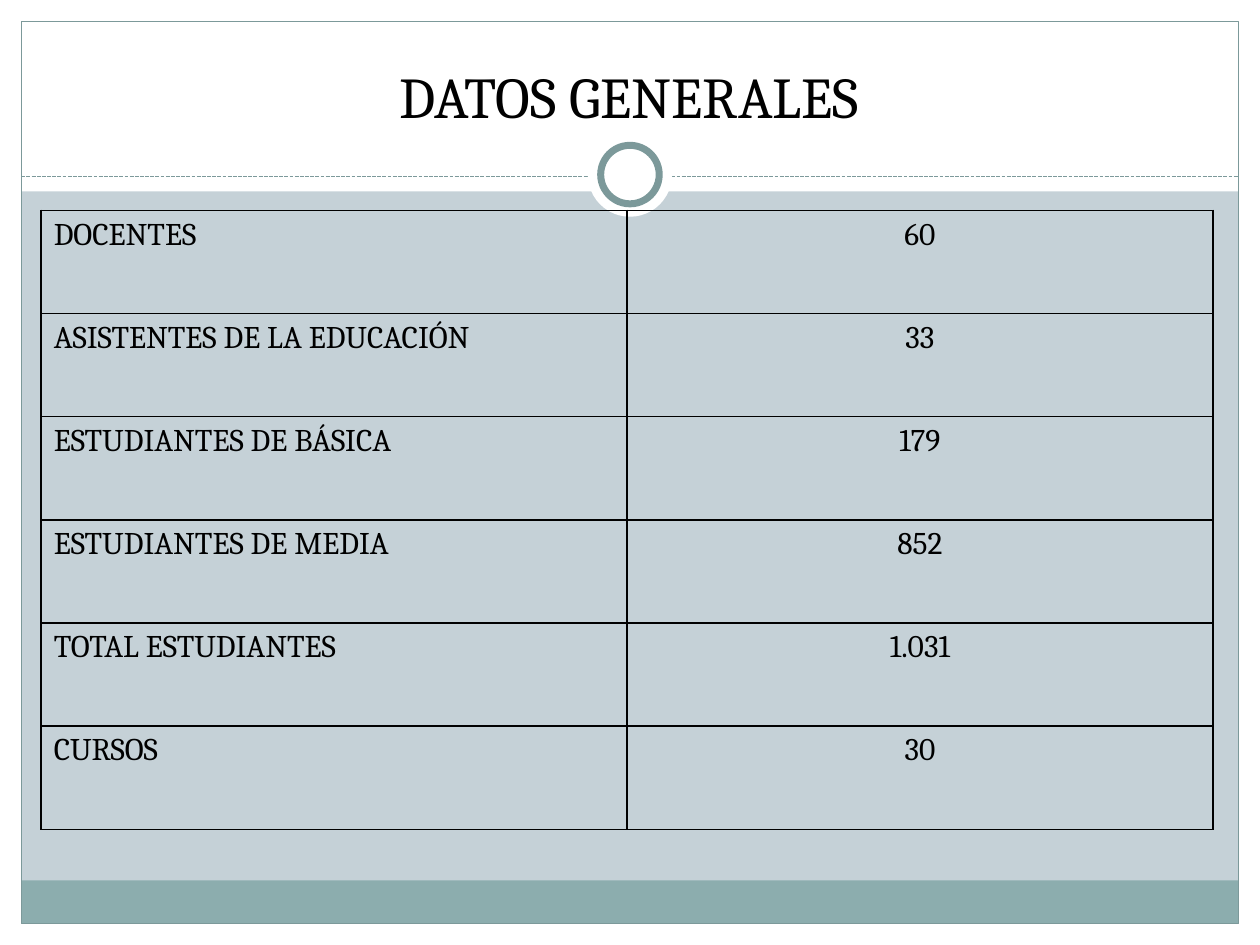
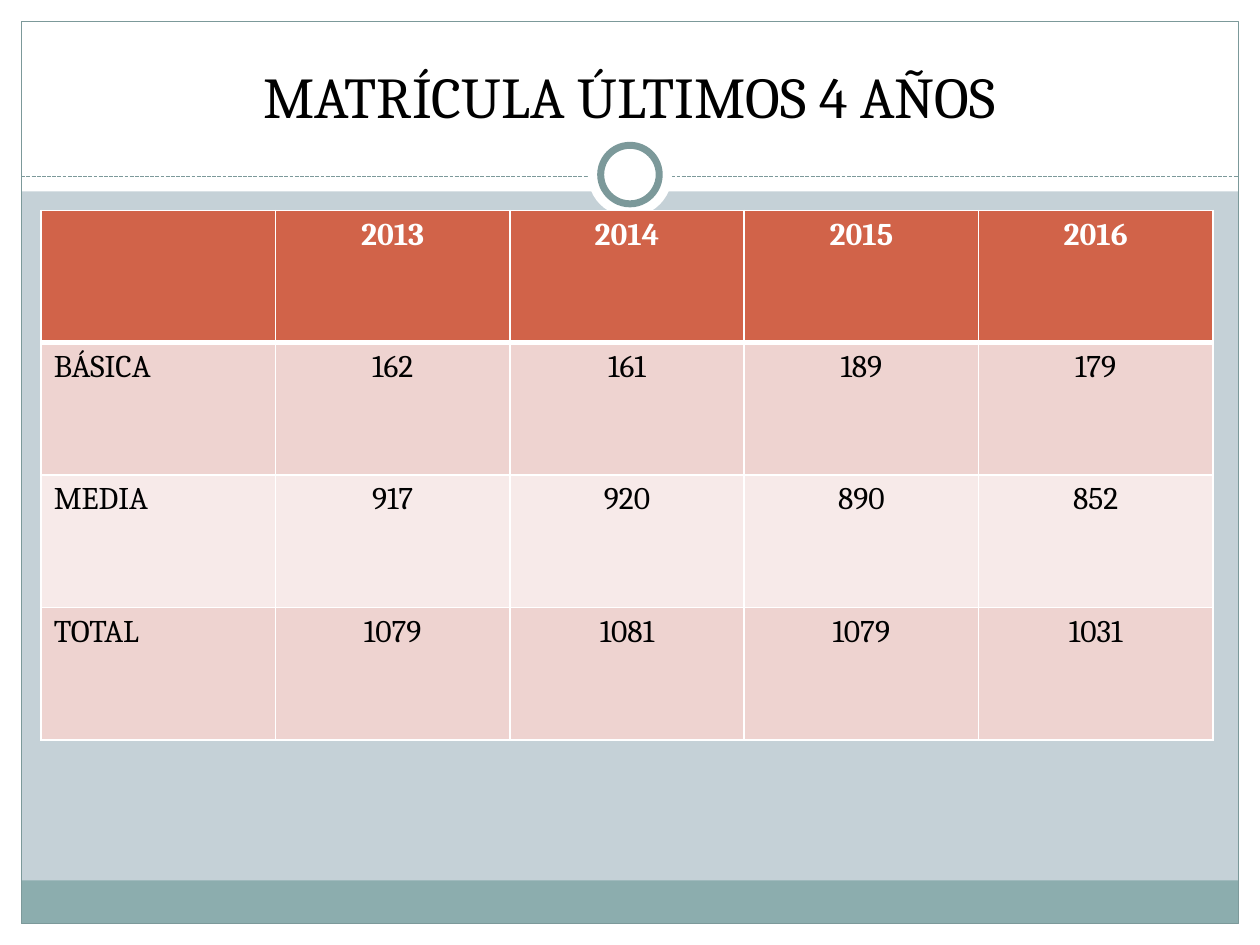
"""Builds two slides of school figures: general data and enrolment over four years."""
import dataclasses

import pptx
import pptx.dml.color
import pptx.enum.dml
import pptx.enum.shapes
import pptx.enum.text
import pptx.oxml
import pptx.oxml.ns
import pptx.util

Cm = pptx.util.Cm
Pt = pptx.util.Pt
SHAPE = pptx.enum.shapes.MSO_SHAPE
ALIGN = pptx.enum.text.PP_ALIGN


@dataclasses.dataclass(frozen=True)
class Theme:
    """Colours, font and type sizes shared by the slides."""
    backdrop: str = "C5D1D7"
    paper: str = "FFFFFF"
    ink: str = "000000"
    footer: str = "8CADAE"
    outline: str = "7C999A"
    header: str = "D16349"
    bands: tuple = ("EED3D0", "F7EAE9")
    font: str = "Cambria"
    title_size: int = 33
    table_size: int = 18


@dataclasses.dataclass(frozen=True)
class Box:
    """A rectangle measured in centimetres."""
    left: float
    top: float
    width: float
    height: float

    @property
    def right(self):
        """Return the right edge."""
        return self.left + self.width

    @property
    def bottom(self):
        """Return the bottom edge."""
        return self.top + self.height

    def lengths(self):
        """Return left, top, width and height as slide lengths."""
        return [Cm(side) for side in dataclasses.astuple(self)]


THEME = Theme()
PAGE = Box(0, 0, 25.4, 19.05)
MARGIN = 0.43
HEADER_HEIGHT = 3.86
RULE_TOP = 3.56
FOOTER_HEIGHT = 0.87
TITLE = Box(0.84, 0.64, 23.7, 2.11)
TABLE_LEFT, TABLE_TOP, TABLE_WIDTH = 0.83, 4.24, 23.62

GENERAL_DATA = [
    ("DOCENTES", "60"),
    ("ASISTENTES DE LA EDUCACIÓN", "33"),
    ("ESTUDIANTES DE BÁSICA", "179"),
    ("ESTUDIANTES DE MEDIA", "852"),
    ("TOTAL ESTUDIANTES", "1.031"),
    ("CURSOS", "30"),
]
ENROLMENT = [
    ("", "2013", "2014", "2015", "2016"),
    ("BÁSICA", "162", "161", "189", "179"),
    ("MEDIA", "917", "920", "890", "852"),
    ("TOTAL", "1079", "1081", "1079", "1031"),
]


def rgb(colour):
    """Return a colour object for a hex string."""
    return pptx.dml.color.RGBColor.from_string(colour)


def style_text(paragraph, size, colour, align, bold=False):
    """Set the font and alignment of a paragraph."""
    paragraph.alignment = align
    paragraph.font.name = THEME.font
    paragraph.font.size = Pt(size)
    paragraph.font.bold = bold
    paragraph.font.color.rgb = rgb(colour)


def add_figure(slide, preset, box, fill=None, line=None, weight=0.75):
    """Add a flat preset shape, filled and outlined only where asked."""
    figure = slide.shapes.add_shape(preset, *box.lengths())
    figure.shadow.inherit = False
    if fill:
        figure.fill.solid()
        figure.fill.fore_color.rgb = rgb(fill)
    else:
        figure.fill.background()
    if line:
        figure.line.color.rgb = rgb(line)
        figure.line.width = Pt(weight)
    else:
        figure.line.fill.background()


def add_rule(slide, box, top):
    """Draw a dashed rule across a box."""
    rule = slide.shapes.add_connector(
        pptx.enum.shapes.MSO_CONNECTOR.STRAIGHT,
        Cm(box.left), Cm(top), Cm(box.right), Cm(top))
    rule.line.color.rgb = rgb(THEME.outline)
    rule.line.width = Pt(0.75)
    rule.line.dash_style = pptx.enum.dml.MSO_LINE.SQUARE_DOT
    properties = rule._element.spPr
    properties.append(properties.makeelement(pptx.oxml.ns.qn("a:effectLst"), {}))


def add_ring(slide, box):
    """Draw a white disc filling a box, with an outlined ring inside it."""
    inset = 0.26
    ring = Box(box.left + inset, box.top + inset,
               box.width - 2 * inset, box.height - 2 * inset)
    add_figure(slide, SHAPE.OVAL, box, THEME.paper)
    add_figure(slide, SHAPE.OVAL, ring, THEME.paper, THEME.outline, 4)


def add_frame(slide, page):
    """Draw the margins, header, footer band, border and ring of a page."""
    inner = Box(page.left + MARGIN, page.top + MARGIN,
                page.width - 2 * MARGIN, page.height - 2 * MARGIN)
    margins = [
        Box(page.left, inner.bottom, page.width, MARGIN),
        Box(page.left, page.top, page.width, HEADER_HEIGHT),
        Box(page.left, page.top, MARGIN, page.height),
        Box(inner.right, page.top, MARGIN, page.height),
    ]
    for margin in margins:
        add_figure(slide, SHAPE.RECTANGLE, margin, THEME.paper)
    footer = Box(inner.left, inner.bottom - FOOTER_HEIGHT, inner.width, FOOTER_HEIGHT)
    add_figure(slide, SHAPE.RECTANGLE, footer, THEME.footer)
    add_figure(slide, SHAPE.RECTANGLE, inner, line=THEME.outline)
    add_rule(slide, inner, page.top + RULE_TOP)
    disc = 1.7
    add_ring(slide, Box(page.left + (page.width - disc) / 2, page.top + 2.67, disc, disc))


def add_title(slide, box, wording):
    """Write the slide title at the foot of a box."""
    frame = slide.shapes.add_textbox(*box.lengths()).text_frame
    frame.word_wrap = True
    frame.vertical_anchor = pptx.enum.text.MSO_ANCHOR.BOTTOM
    frame.text = wording
    style_text(frame.paragraphs[0], THEME.title_size, THEME.ink, ALIGN.CENTER)


def set_borders(cell, colour, top=1, bottom=1):
    """Outline a cell, with its own weights for top and bottom."""
    properties = cell._tc.get_or_add_tcPr()
    weights = {"lnL": 1, "lnR": 1, "lnT": top, "lnB": bottom}
    for position, (side, weight) in enumerate(weights.items()):
        properties.insert(position, pptx.oxml.parse_xml(
            f'<a:{side} {pptx.oxml.ns.nsdecls("a")} w="{Pt(weight)}">'
            f'<a:solidFill><a:srgbClr val="{colour}"/></a:solidFill></a:{side}>'))


def add_grid(slide, box, rows, border, has_header=False):
    """Fill a box with an even table, banded below a header if it has one."""
    grid = slide.shapes.add_table(len(rows), len(rows[0]), *box.lengths()).table
    grid.first_row = has_header
    grid.horz_banding = False
    for row_index, row in enumerate(rows):
        is_header = has_header and row_index == 0
        for column_index, wording in enumerate(row):
            cell = grid.cell(row_index, column_index)
            cell.text = wording
            style_text(cell.text_frame.paragraphs[0], THEME.table_size,
                       THEME.paper if is_header else THEME.ink,
                       ALIGN.CENTER if column_index else ALIGN.LEFT, is_header)
            if has_header:
                band = THEME.bands[(row_index - 1) % 2]
                cell.fill.solid()
                cell.fill.fore_color.rgb = rgb(THEME.header if is_header else band)
            else:
                cell.fill.background()
            set_borders(cell, border,
                        top=3 if has_header and row_index == 1 else 1,
                        bottom=3 if is_header else 1)


def add_table_slide(deck, title, rows, row_height, border, has_header=False):
    """Add a framed slide with a title and a table."""
    slide = deck.slides.add_slide(deck.slide_layouts[6])
    slide.background.fill.solid()
    slide.background.fill.fore_color.rgb = rgb(THEME.backdrop)
    add_frame(slide, PAGE)
    add_title(slide, TITLE, title)
    box = Box(TABLE_LEFT, TABLE_TOP, TABLE_WIDTH, row_height * len(rows))
    add_grid(slide, box, rows, border, has_header)


def main():
    """Build and save the deck."""
    deck = pptx.Presentation()
    deck.slide_width, deck.slide_height = Cm(PAGE.width), Cm(PAGE.height)
    add_table_slide(deck, "DATOS GENERALES", GENERAL_DATA, 2.08, THEME.ink)
    add_table_slide(deck, "MATRÍCULA ÚLTIMOS 4 AÑOS", ENROLMENT, 2.67, THEME.paper,
                    has_header=True)
    deck.save("out.pptx")


if __name__ == "__main__":
    main()
